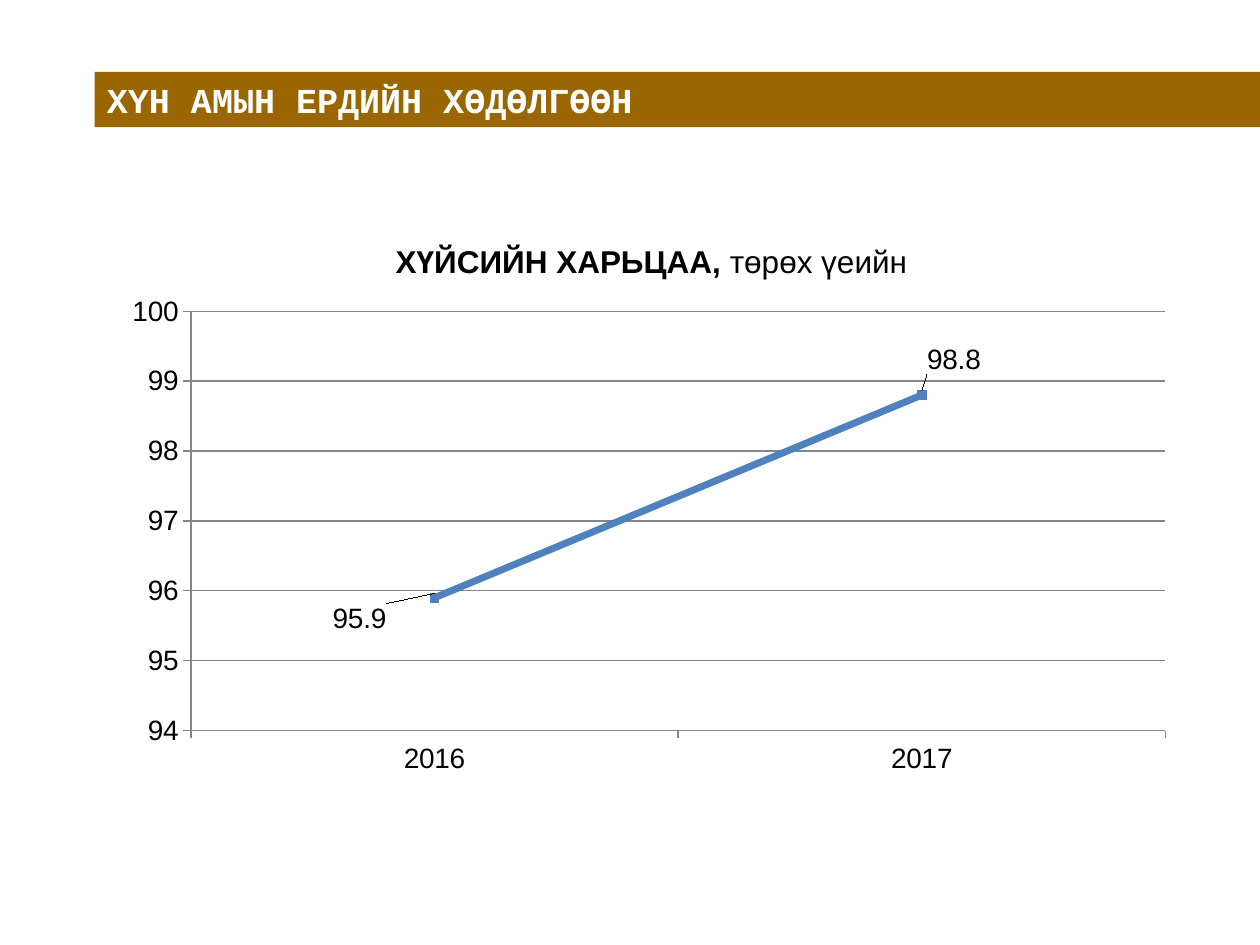
from dataclasses import dataclass

from lxml.etree import SubElement
from pptx import Presentation
from pptx.chart.data import CategoryChartData
from pptx.dml.color import RGBColor
from pptx.enum.chart import XL_CHART_TYPE, XL_LABEL_POSITION, XL_MARKER_STYLE, XL_TICK_MARK
from pptx.enum.shapes import MSO_SHAPE
from pptx.enum.text import MSO_ANCHOR, PP_ALIGN
from pptx.oxml.ns import qn
from pptx.util import Inches, Pt


@dataclass(frozen=True)
class Theme:
    bar: RGBColor = RGBColor(0x99, 0x66, 0x00)
    white: RGBColor = RGBColor(0xFF, 0xFF, 0xFF)
    text: RGBColor = RGBColor(0, 0, 0)
    series: RGBColor = RGBColor(0x4F, 0x81, 0xBD)
    axis: RGBColor = RGBColor(0x86, 0x86, 0x86)
    heading_font: str = "Courier New"
    chart_font: str = "Arial"
    heading_size: Pt = Pt(20)
    title_size: Pt = Pt(18)
    label_size: Pt = Pt(16)
    axis_width: Pt = Pt(0.75)
    series_width: Pt = Pt(4)


THEME = Theme()


def set_font(font, name, size, color, bold):
    font.name = name
    font.size = size
    font.color.rgb = color
    font.bold = bold


def set_layout(parent, index, **values):
    for old in parent.findall(qn("c:layout")):
        parent.remove(old)
    layout = SubElement(parent, qn("c:layout"))
    parent.insert(index, layout)
    manual = SubElement(layout, qn("c:manualLayout"))
    for name, value in values.items():
        SubElement(manual, qn(f"c:{name}")).set("val", str(value))


def add_heading(s, left, top, width, height, text):
    sp = s.shapes.add_shape(MSO_SHAPE.RECTANGLE, left, top, width, height)
    sp.shadow.inherit = False
    sp.fill.solid()
    sp.fill.fore_color.rgb = THEME.bar
    sp.line.fill.background()
    tf = sp.text_frame
    tf.text = text
    tf.word_wrap = True
    tf.vertical_anchor = MSO_ANCHOR.MIDDLE
    p = tf.paragraphs[0]
    p.alignment = PP_ALIGN.JUSTIFY
    set_font(p.runs[0].font, THEME.heading_font, THEME.heading_size, THEME.white, True)


def add_title(chart, parts):
    chart.has_title = True
    chart.chart_title.include_in_layout = False
    p = chart.chart_title.text_frame.paragraphs[0]
    for text, bold in parts:
        r = p.add_run()
        r.text = text
        set_font(r.font, THEME.chart_font, THEME.title_size, THEME.text, bold)


def style_axes(chart):
    for axis in (chart.category_axis, chart.value_axis):
        axis.major_tick_mark = XL_TICK_MARK.OUTSIDE
        axis.format.line.color.rgb = THEME.axis
        axis.format.line.width = THEME.axis_width
    axis = chart.value_axis
    axis.minimum_scale, axis.maximum_scale, axis.major_unit = 94, 100, 1
    axis.tick_labels.number_format = "0"
    axis.tick_labels.number_format_is_linked = False
    axis.has_major_gridlines = True
    axis.major_gridlines.format.line.color.rgb = THEME.axis
    axis.major_gridlines.format.line.width = THEME.axis_width


def style_series(series, label_offsets):
    series.smooth = False
    series.format.line.color.rgb = THEME.series
    series.format.line.width = THEME.series_width
    series.marker.style = XL_MARKER_STYLE.SQUARE
    series.marker.size = 5
    series.marker.format.fill.solid()
    series.marker.format.fill.fore_color.rgb = THEME.series
    series.marker.format.line.color.rgb = THEME.series
    labels = series.data_labels
    labels.show_value = True
    labels.position = XL_LABEL_POSITION.ABOVE
    for i, (x, y) in enumerate(label_offsets):
        series.points[i].data_label.position = XL_LABEL_POSITION.ABOVE
        set_layout(series._element.findall(".//" + qn("c:dLbl"))[i], 1, x=x, y=y)


def add_ratio_chart(s, left, top, width, height):
    data = CategoryChartData(number_format="0.0")
    data.categories = ["2016", "2017"]
    data.add_series("Series 1", (95.9, 98.8))
    chart = s.shapes.add_chart(
        XL_CHART_TYPE.LINE_MARKERS, left, top, width, height, data
    ).chart
    chart.has_legend = False
    set_font(chart.font, THEME.chart_font, THEME.label_size, THEME.text, False)
    add_title(chart, (("ХҮЙСИЙН ХАРЬЦАА,", True), (" төрөх үеийн", False)))
    style_axes(chart)
    chart.plots[0].vary_by_categories = False
    style_series(chart.plots[0].series[0], ((-0.07, 0.08), (0.03, -0.02)))
    plot_area = chart._chartSpace.find(".//" + qn("c:plotArea"))
    set_layout(plot_area, 0, layoutTarget="inner", xMode="edge", yMode="edge",
               x=0.07, y=0.16, w=0.91, h=0.74)


def main():
    prs = Presentation()
    prs.slide_width, prs.slide_height = Inches(10), Inches(7.5)
    s = prs.slides.add_slide(prs.slide_layouts[6])
    add_ratio_chart(s, Inches(0.92), Inches(1.75), Inches(8.5), Inches(4.5))
    add_heading(s, Inches(0.75), Inches(0.57), Inches(9.25), Inches(0.44),
                "ХҮН АМЫН ЕРДИЙН ХӨДӨЛГӨӨН")
    prs.save("out.pptx")


if __name__ == "__main__":
    main()
